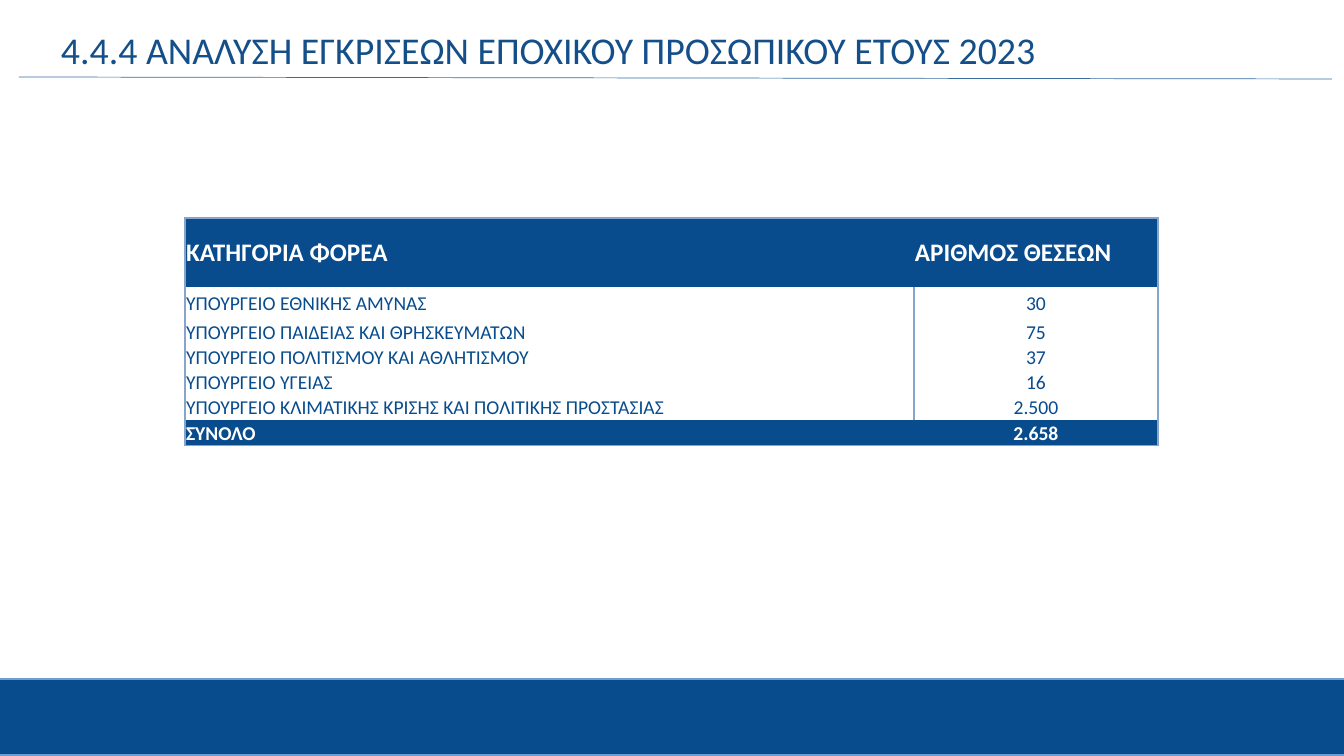
from lxml.etree import SubElement
from pptx import Presentation
from pptx.dml.color import RGBColor
from pptx.enum.shapes import MSO_CONNECTOR, MSO_SHAPE
from pptx.enum.text import MSO_ANCHOR, MSO_AUTO_SIZE, PP_ALIGN
from pptx.oxml.ns import qn
from pptx.util import Emu, Pt

COLORS = {
    "navy": "084C8D",
    "title": "144F89",
    "rule": "376A9F",
    "band_edge": "6F9DD0",
    "border": "87A4CB",
    "white": "FFFFFF",
}
FONT = "Calibri"
ROWS = [
    ("ΚΑΤΗΓΟΡΙΑ ΦΟΡΕΑ", "ΑΡΙΘΜΟΣ ΘΕΣΕΩΝ"),
    ("ΥΠΟΥΡΓΕΙΟ ΕΘΝΙΚΗΣ ΑΜΥΝΑΣ", "30"),
    ("ΥΠΟΥΡΓΕΙΟ ΠΑΙΔΕΙΑΣ ΚΑΙ ΘΡΗΣΚΕΥΜΑΤΩΝ", "75"),
    ("ΥΠΟΥΡΓΕΙΟ ΠΟΛΙΤΙΣΜΟΥ ΚΑΙ ΑΘΛΗΤΙΣΜΟΥ", "37"),
    ("ΥΠΟΥΡΓΕΙΟ ΥΓΕΙΑΣ", "16"),
    ("ΥΠΟΥΡΓΕΙΟ ΚΛΙΜΑΤΙΚΗΣ ΚΡΙΣΗΣ ΚΑΙ ΠΟΛΙΤΙΚΗΣ ΠΡΟΣΤΑΣΙΑΣ", "2.500"),
    ("ΣΥΝΟΛΟ", "2.658"),
]
COL_WIDTHS = [729, 244]
ROW_HEIGHTS = [69, 29, 29, 25, 25, 25, 26]


def px(n):
    return Emu(round(n * 914400 / 100.8))


def rgb(name):
    return RGBColor.from_string(COLORS[name])


def write(tf, text, size, color, bold=False, align=PP_ALIGN.LEFT, spacing=None):
    p = tf.paragraphs[0]
    p.alignment = align
    if spacing:
        p.line_spacing = spacing
    r = p.add_run()
    r.text = text
    r.font.name = FONT
    r.font.size = Pt(size)
    r.font.bold = bold
    r.font.color.rgb = rgb(color)


def add_band(s, x, y, w, h):
    sp = s.shapes.add_shape(MSO_SHAPE.RECTANGLE, px(x), px(y), px(w), px(h))
    sp.shadow.inherit = False
    sp.fill.solid()
    sp.fill.fore_color.rgb = rgb("navy")
    sp.line.color.rgb = rgb("band_edge")
    sp.line.width = Pt(1)


def add_rule(s, x1, y1, x2, y2):
    line = s.shapes.add_connector(MSO_CONNECTOR.STRAIGHT, px(x1), px(y1), px(x2), px(y2))
    line.line.color.rgb = rgb("rule")
    line.line.width = Pt(0.5)
    SubElement(line.element.spPr, qn("a:effectLst"))


def set_title(s, text, x, y, w, h):
    sp = s.shapes.title
    sp.left, sp.top, sp.width, sp.height = px(x), px(y), px(w), px(h)
    tf = sp.text_frame
    tf.word_wrap = True
    tf.auto_size = MSO_AUTO_SIZE.NONE
    tf.vertical_anchor = MSO_ANCHOR.TOP
    tf.margin_left = tf.margin_right = tf.margin_top = tf.margin_bottom = px(5)
    write(tf, text, 27, "title", spacing=0.8)


def set_borders(cell, sides):
    """Draw the borders named in sides (letters of LRTB) and clear the others."""
    tcPr = cell._tc.get_or_add_tcPr()
    for side in "LRTB":
        ln = SubElement(tcPr, qn(f"a:ln{side}"), w=str(Pt(1)))
        if side in sides:
            fill = SubElement(ln, qn("a:solidFill"))
            SubElement(fill, qn("a:srgbClr"), val=COLORS["border"])
        else:
            SubElement(ln, qn("a:noFill"))


def format_cell(cell, text, row, col):
    header, total = row == 0, row == len(ROWS) - 1
    strong = header or total
    sides = "LR" if not strong else "LR"[col]
    sides += "T" if header else "B" if total else ""
    set_borders(cell, sides)
    if strong:
        cell.fill.solid()
        cell.fill.fore_color.rgb = rgb("navy")
    else:
        cell.fill.background()
    cell.margin_left = cell.margin_right = cell.margin_top = px(1)
    cell.margin_bottom = 0
    cell.vertical_anchor = MSO_ANCHOR.MIDDLE if header else MSO_ANCHOR.BOTTOM
    write(cell.text_frame, text, 18 if header else 14,
          "white" if strong else "navy", bold=strong,
          align=PP_ALIGN.CENTER if col and not header else PP_ALIGN.LEFT)


def add_positions_table(s, x, y):
    frame = s.shapes.add_table(len(ROWS), len(COL_WIDTHS), px(x), px(y),
                               px(sum(COL_WIDTHS)), px(sum(ROW_HEIGHTS)))
    table = frame.table
    table.horz_banding = False
    for column, width in zip(table.columns, COL_WIDTHS):
        column.width = px(width)
    for row, height in zip(table.rows, ROW_HEIGHTS):
        row.height = px(height)
    for i, texts in enumerate(ROWS):
        for j, text in enumerate(texts):
            format_cell(table.cell(i, j), text, i, j)


def main():
    prs = Presentation()
    prs.slide_width, prs.slide_height = px(1344), px(756)
    s = prs.slides.add_slide(prs.slide_layouts[5])
    add_band(s, -2, 679, 1348, 76)
    add_rule(s, 19, 77, 1332, 79)
    set_title(s, "4.4.4 ΑΝΑΛΥΣΗ ΕΓΚΡΙΣΕΩΝ ΕΠΟΧΙΚΟΥ ΠΡΟΣΩΠΙΚΟΥ ΕΤΟΥΣ 2023",
              56, 30, 1288, 46)
    add_positions_table(s, 185, 218)
    prs.save("out.pptx")


if __name__ == "__main__":
    main()
